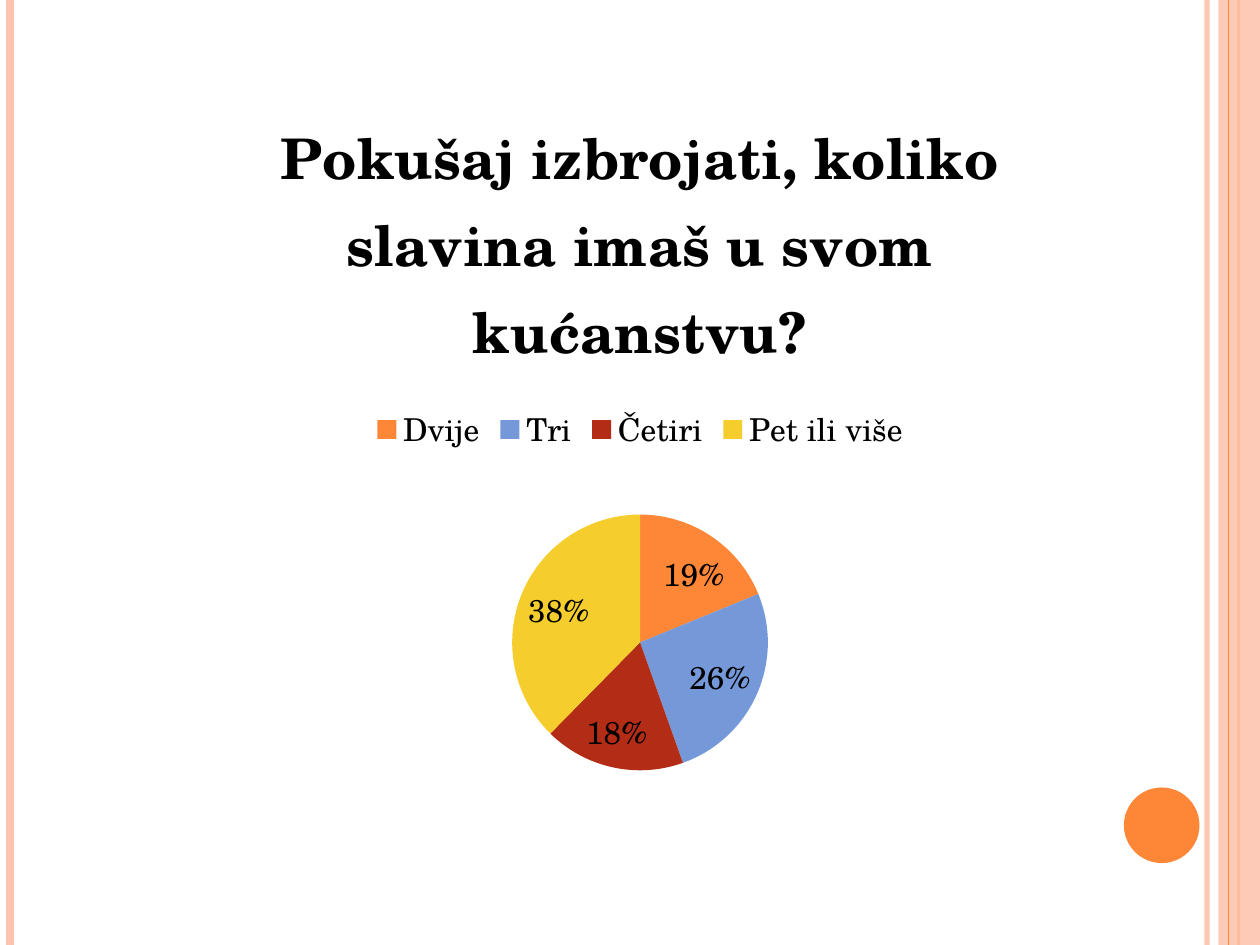
from dataclasses import dataclass

from lxml import etree
from pptx import Presentation
from pptx.chart.data import CategoryChartData
from pptx.dml.color import RGBColor
from pptx.enum import chart as ch, shapes
from pptx.oxml.ns import qn
from pptx.util import Inches, Pt


@dataclass(frozen=True)
class Theme:
    font: str = "TeX Gyre Schola"
    ink: str = "000000"
    orange: str = "FE8637"
    peach: str = "FEC3AE"
    slices: tuple = ("FE8637", "7598D9", "B32C16", "F5CD2D")
    title_size: int = 32
    body_size: int = 18


class SlideBuilder:
    def __init__(self, slide, theme):
        self.slide = slide
        self.theme = theme

    def paint(self, fill, color, opacity=100):
        fill.solid()
        fill.fore_color.rgb = RGBColor.from_string(color)
        if opacity < 100:
            color_node = fill._xPr.find(qn("a:solidFill"))[0]
            etree.SubElement(color_node, qn("a:alpha"), val=str(opacity * 1000))

    def vertical_line(self, x, color, width, opacity=100):
        rule = self.slide.shapes.add_connector(
            shapes.MSO_CONNECTOR.STRAIGHT, Inches(x), 0, Inches(x), Inches(7.5))
        rule.line.width = Pt(width)
        self.paint(rule.line.fill, color, opacity)
        etree.SubElement(rule._element.spPr, qn("a:effectLst"))

    def shape(self, kind, left, top, width, height, color, opacity=100):
        block = self.slide.shapes.add_shape(
            kind, Inches(left), Inches(top), Inches(width), Inches(height))
        block.shadow.inherit = False
        block.line.fill.background()
        self.paint(block.fill, color, opacity)

    def style_font(self, font, size, bold=False):
        font.name = self.theme.font
        font.size = Pt(size)
        font.bold = bold
        font.color.rgb = RGBColor.from_string(self.theme.ink)

    def pie(self, question, answers, left, top, width, height, center, diameter):
        data = CategoryChartData()
        data.categories = list(answers)
        data.add_series(question, list(answers.values()))
        chart = self.slide.shapes.add_chart(
            ch.XL_CHART_TYPE.PIE, Inches(left), Inches(top),
            Inches(width), Inches(height), data).chart
        self.style_font(chart.font, self.theme.body_size)

        # Question above the pie
        chart.has_title = True
        heading = chart.chart_title.text_frame
        heading.text = question
        self.style_font(heading.paragraphs[0].runs[0].font,
                        self.theme.title_size, bold=True)
        chart.chart_title.include_in_layout = False

        # Legend of answers
        chart.has_legend = True
        chart.legend.position = ch.XL_LEGEND_POSITION.TOP
        chart.legend.include_in_layout = False

        # Slices and percentages
        plot = chart.plots[0]
        plot.vary_by_categories = True
        for index, color in enumerate(self.theme.slices):
            self.paint(plot.series[0].points[index].format.fill, color)
        plot.has_data_labels = True
        labels = plot.data_labels
        labels.show_percentage = True
        labels.show_value = False
        labels.number_format = "0%"
        labels.number_format_is_linked = False
        labels.position = ch.XL_LABEL_POSITION.BEST_FIT
        self.style_font(labels.font, self.theme.body_size)

        # Plot box as fractions of the chart frame
        radius = diameter / 2
        self.place_plot(chart, ((center[0] - radius - left) / width,
                                (center[1] - radius - top) / height,
                                diameter / width, diameter / height))

    def place_plot(self, chart, plot_box):
        area = chart._chartSpace.find(".//" + qn("c:plotArea"))
        for old in area.findall(qn("c:layout")):
            area.remove(old)
        layout = etree.Element(qn("c:layout"))
        manual = etree.SubElement(layout, qn("c:manualLayout"))
        settings = [("layoutTarget", "inner"), ("xMode", "edge"), ("yMode", "edge")]
        for tag, value in settings + list(zip("xywh", plot_box)):
            etree.SubElement(manual, qn("c:" + tag), val=str(value))
        area.insert(0, layout)


def main():
    deck = Presentation()
    deck.slide_width, deck.slide_height = Inches(10), Inches(7.5)
    theme = Theme()
    page = SlideBuilder(deck.slides.add_slide(deck.slide_layouts[6]), theme)

    # Side stripes and corner dot
    page.vertical_line(9.58, theme.peach, 3, 93)
    page.vertical_line(0.08, theme.peach, 4.5)
    page.vertical_line(9.83, theme.orange, 1.5)
    page.shape(shapes.MSO_SHAPE.RECTANGLE, 9.67, 0, 0.33, 7.5, theme.peach, 87)
    page.vertical_line(9.75, theme.orange, 0.75)
    page.shape(shapes.MSO_SHAPE.OVAL, 8.92, 6.25, 0.6, 0.6, theme.orange)

    # Survey result
    answers = {"Dvije": 19, "Tri": 26, "Četiri": 18, "Pet ili više": 38}
    page.pie("Pokušaj izbrojati, koliko slavina imaš u svom kućanstvu?", answers,
             0.67, 0.6, 8.82, 6.06, center=(5.08, 5.1), diameter=2.03)

    deck.save("out.pptx")


if __name__ == "__main__":
    main()
